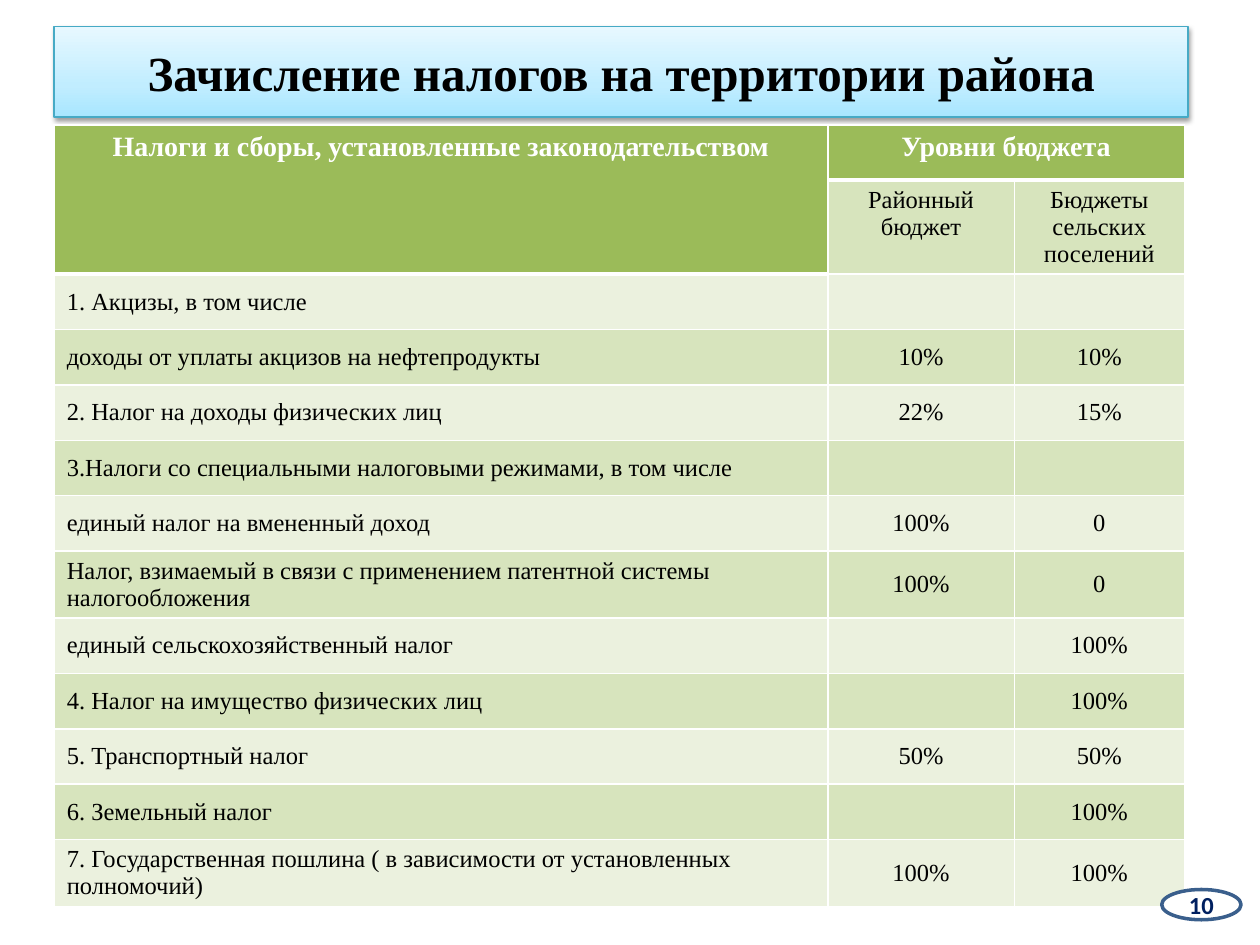
from copy import deepcopy
from dataclasses import dataclass

from pptx import Presentation
from pptx import oxml
from pptx import util as u
from pptx.dml import color
from pptx.enum import shapes, text
from pptx.oxml import ns


@dataclass(frozen=True)
class Theme:
    serif: str = "Times New Roman"
    sans: str = "Calibri"
    black: str = "000000"
    white: str = "FFFFFF"
    navy: str = "002060"
    header: str = "9BBB59"
    dark_band: str = "D7E4BD"
    light_band: str = "EBF1DE"
    title_line: str = "46AAC5"
    badge_line: str = "3A5F8C"
    title_stops: tuple = ((0, "A7E6FF"), (0.35, "C1EDFF"), (1, "E7F8FF"))
    title_size: int = 28
    header_size: int = 16
    body_size: int = 14


theme = Theme()


def rgb(value):
    return color.RGBColor.from_string(value)


def write(frame, words, font=theme.serif, size=theme.body_size, ink=theme.black,
          bold=False, align=text.PP_ALIGN.CENTER, anchor=text.MSO_ANCHOR.MIDDLE):
    frame.word_wrap = True
    frame.vertical_anchor = anchor
    para = frame.paragraphs[0]
    para.alignment = align
    span = para.add_run()
    span.text = words
    span.font.name = font
    span.font.size = u.Pt(size)
    span.font.bold = bold
    span.font.color.rgb = rgb(ink)


deck = Presentation()
deck.slide_width = u.Inches(10)
deck.slide_height = u.Inches(7.5)
page = deck.slides.add_slide(deck.slide_layouts[6])

title = page.shapes.add_shape(shapes.MSO_SHAPE.RECTANGLE, u.Inches(0.43), u.Inches(0.21),
                              u.Inches(9), u.Inches(0.72))
title.fill.gradient()
title.fill.gradient_angle = 90
stop_list = title._element.spPr.find(".//" + ns.qn("a:gsLst"))
stop_list.append(deepcopy(stop_list[0]))
for stop, (position, tint) in zip(title.fill.gradient_stops, theme.title_stops):
    stop.position = position
    stop.color.rgb = rgb(tint)
title.line.color.rgb = rgb(theme.title_line)
title.line.width = u.Pt(0.75)
title.shadow.inherit = False
effects = title._element.spPr.find(ns.qn("a:effectLst"))
effects.append(oxml.parse_xml(
    f'<a:outerShdw {ns.nsdecls("a")} blurRad="{u.Pt(3.1)}" dist="{u.Pt(1.6)}" '
    f'dir="5400000" rotWithShape="0"><a:srgbClr val="{theme.black}">'
    '<a:alpha val="38000"/></a:srgbClr></a:outerShdw>'))
write(title.text_frame, "Зачисление налогов на территории района",
      size=theme.title_size, bold=True)

rows = [
    ("Налоги и сборы, установленные законодательством", "Уровни бюджета", ""),
    ("", "Районный бюджет", "Бюджеты сельских поселений"),
    ("1. Акцизы, в том числе", "", ""),
    ("доходы от уплаты акцизов на нефтепродукты", "10%", "10%"),
    ("2. Налог на доходы физических лиц", "22%", "15%"),
    ("3.Налоги со специальными налоговыми режимами, в том числе", "", ""),
    ("единый налог на вмененный доход", "100%", "0"),
    ("Налог, взимаемый в связи с применением патентной системы налогообложения", "100%", "0"),
    ("единый сельскохозяйственный налог", "", "100%"),
    ("4. Налог на имущество физических лиц", "", "100%"),
    ("5. Транспортный налог", "50%", "50%"),
    ("6. Земельный налог", "", "100%"),
    ("7. Государственная пошлина ( в зависимости от установленных полномочий)", "100%", "100%"),
]
widths = (6.14, 1.48, 1.35)
heights = [0.44, 0.66] + [0.44] * (len(rows) - 2)
table = page.shapes.add_table(len(rows), len(widths), u.Inches(0.43), u.Inches(0.99),
                              u.Inches(sum(widths)), u.Inches(sum(heights))).table
for column, width in zip(table.columns, widths):
    column.width = u.Inches(width)
for line, height in zip(table.rows, heights):
    line.height = u.Inches(height)
table.cell(0, 0).merge(table.cell(1, 0))
table.cell(0, 1).merge(table.cell(0, 2))

for r, row in enumerate(rows):
    for c, words in enumerate(row):
        cell = table.cell(r, c)
        is_header = r == 0 or (r == 1 and c == 0)
        above_header = (r == 1 and c > 0) or (r == 2 and c == 0)
        edges = {"L": 1, "R": 1, "T": 3 if above_header else 1, "B": 3 if is_header else 1}
        for side, weight in edges.items():
            cell._tc.get_or_add_tcPr().append(oxml.parse_xml(
                f'<a:ln{side} {ns.nsdecls("a")} w="{u.Pt(weight)}"><a:solidFill>'
                f'<a:srgbClr val="{theme.white}"/></a:solidFill></a:ln{side}>'))
        band = theme.dark_band if r % 2 else theme.light_band
        cell.fill.solid()
        cell.fill.fore_color.rgb = rgb(theme.header if is_header else band)
        cell.vertical_anchor = text.MSO_ANCHOR.TOP if r < 2 else text.MSO_ANCHOR.MIDDLE
        if words:
            write(cell.text_frame, words, bold=is_header, anchor=None,
                  size=theme.header_size if is_header else theme.body_size,
                  ink=theme.white if is_header else theme.black,
                  align=text.PP_ALIGN.LEFT if r > 1 and c == 0 else text.PP_ALIGN.CENTER)

badge = page.shapes.add_shape(shapes.MSO_SHAPE.OVAL, u.Inches(9.22), u.Inches(7.06),
                              u.Inches(0.63), u.Inches(0.24))
badge.shadow.inherit = False
badge.fill.solid()
badge.fill.fore_color.rgb = rgb(theme.white)
badge.line.color.rgb = rgb(theme.badge_line)
badge.line.width = u.Pt(2)
write(badge.text_frame, "10", font=theme.sans, ink=theme.navy, bold=True)

deck.save("out.pptx")
